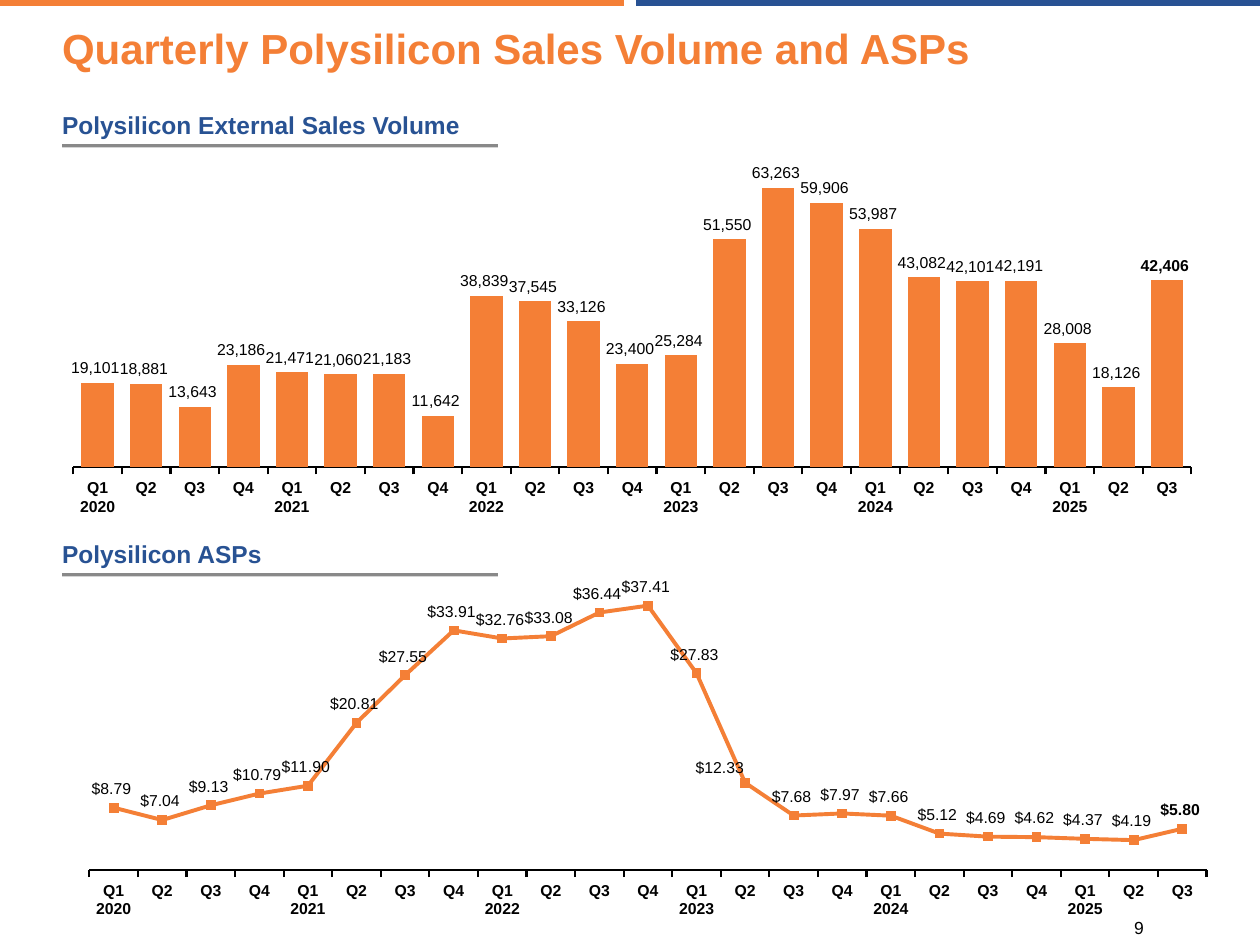
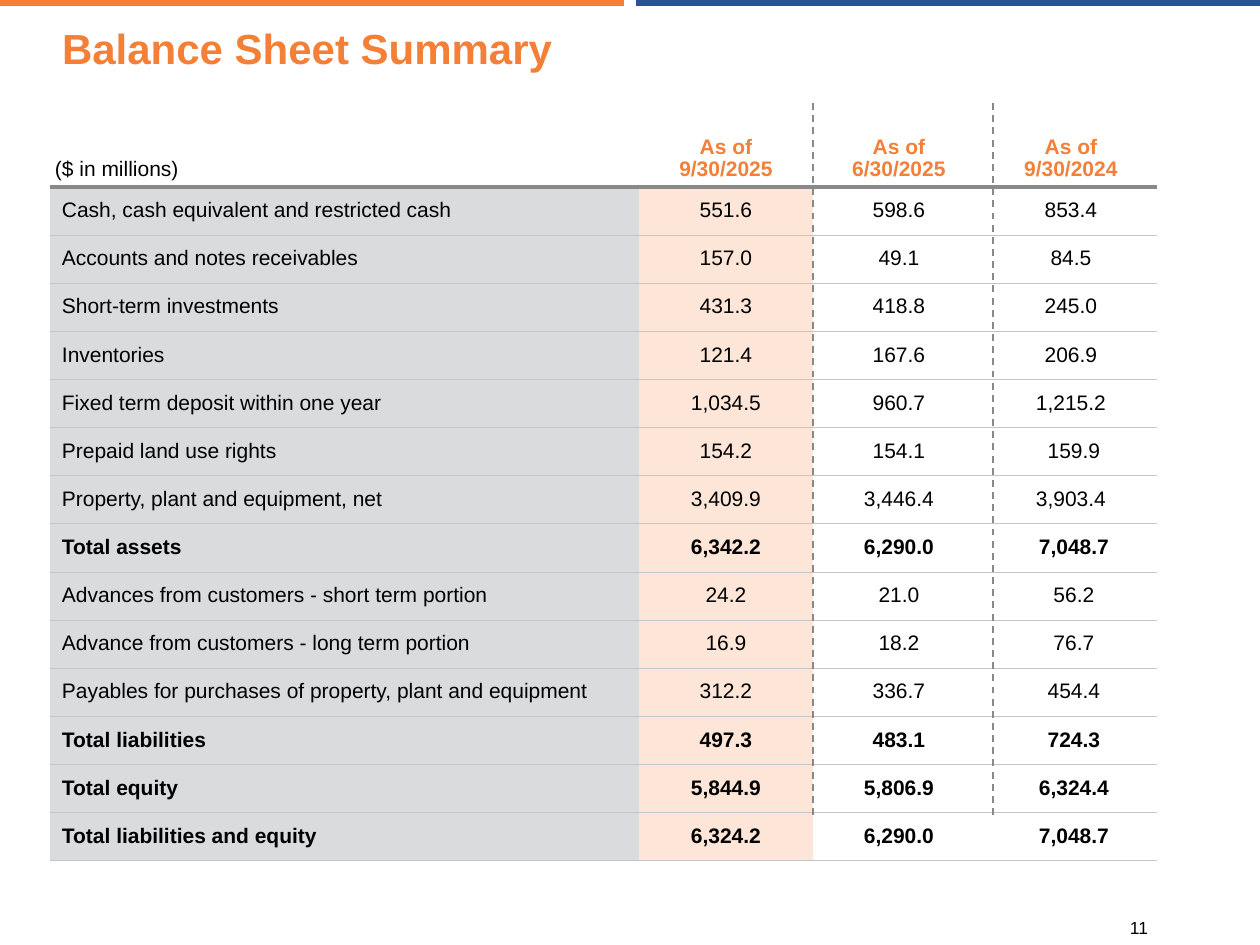
from lxml.etree import SubElement
from pptx import Presentation
from pptx.chart.data import CategoryChartData
from pptx.dml.color import RGBColor
from pptx.enum.chart import XL_CHART_TYPE, XL_LABEL_POSITION, XL_MARKER_STYLE, XL_TICK_MARK
from pptx.enum.dml import MSO_LINE
from pptx.enum.shapes import MSO_CONNECTOR, MSO_SHAPE
from pptx.enum.text import MSO_ANCHOR, PP_ALIGN
from pptx.oxml import parse_xml
from pptx.oxml.ns import nsdecls, qn
from pptx.util import Emu, Pt

FONT = "Arial"
ORANGE, BLUE, GREY, BLACK, WHITE = "F47F36", "285293", "898989", "000000", "FFFFFF"
LABEL_FILL, CURRENT_FILL, RULE = "DADBDD", "FDE5D7", "C3C5C8"
NO_TABLE_STYLE = "{2D5ABB26-0587-4C30-8999-92F81FD0307C}"

QUARTERS = [
    f"Q{quarter} {year}" if quarter == 1 else f"Q{quarter}"
    for year in range(2020, 2026)
    for quarter in range(1, 5)
][:-1]

VOLUME = {
    "heading": "Polysilicon External Sales Volume",
    "heading_top": 112,
    "kind": XL_CHART_TYPE.COLUMN_CLUSTERED,
    "box": (50, 145, 1160, 375),
    "plot": (0.02, 0.035, 0.964, 0.824),
    "format": r"#,##0_);[Red]\(#,##0\)",
    "maximum": 70000,
    "position": XL_LABEL_POSITION.OUTSIDE_END,
    "values": [19101, 18881, 13643, 23186, 21471, 21060, 21183, 11642,
               38839, 37545, 33126, 23400, 25284, 51550, 63263, 59906,
               53987, 43082, 42101, 42191, 28008, 18126, 42406],
}
PRICES = {
    "heading": "Polysilicon ASPs",
    "heading_top": 541,
    "kind": XL_CHART_TYPE.LINE_MARKERS,
    "box": (50, 578, 1159, 365),
    "plot": (0.034, 0.007, 0.964, 0.792),
    "format": r'"$"#,##0.00_);[Red]\("$"#,##0.00\)',
    "maximum": 40.8,
    "position": XL_LABEL_POSITION.ABOVE,
    "values": [8.79, 7.04, 9.13, 10.79, 11.9, 20.81, 27.55, 33.91,
               32.76, 33.08, 36.44, 37.41, 27.83, 12.33, 7.68, 7.97,
               7.66, 5.12, 4.69, 4.62, 4.37, 4.19, 5.8],
}
MOVED_LABEL, MOVED_BY = 13, (-0.02, 0.01)

HEADER = ["($ in millions)", "As of\n9/30/2025", "As of\n6/30/2025", "As of\n9/30/2024"]
BALANCE = [
    ("Cash, cash equivalent and restricted cash", "551.6", "598.6", "853.4"),
    ("Accounts and notes receivables", "157.0", "49.1", "84.5"),
    ("Short-term investments", "431.3", "418.8", "245.0"),
    ("Inventories", "121.4", "167.6", "206.9"),
    ("Fixed term deposit within one year", "1,034.5", "960.7", "1,215.2"),
    ("Prepaid land use rights", "154.2", "154.1", "159.9"),
    ("Property, plant and equipment, net", "3,409.9", "3,446.4", "3,903.4"),
    ("Total assets", "6,342.2", "6,290.0", "7,048.7"),
    ("Advances from customers - short term portion", "24.2", "21.0", "56.2"),
    ("Advance from customers - long term portion", "16.9", "18.2", "76.7"),
    ("Payables for purchases of property, plant and equipment", "312.2", "336.7", "454.4"),
    ("Total liabilities", "497.3", "483.1", "724.3"),
    ("Total equity", "5,844.9", "5,806.9", "6,324.4"),
    ("Total liabilities and equity", "6,324.2", "6,290.0", "7,048.7"),
]
COLUMN_WIDTHS = [589, 174, 172, 172]
TABLE_LEFT, TABLE_TOP, HEADER_HEIGHT, BODY_HEIGHT = 50, 101, 86, 674
SHIFTED_ROWS = {5, *range(7, 14)}


def px(length):
    return Emu(round(length * 914400 / 126))


def rgb(colour):
    return RGBColor.from_string(colour)


def set_font(font, size, colour=BLACK, bold=False):
    font.name, font.size, font.bold = FONT, Pt(size), bold
    font.color.rgb = rgb(colour)


def write(frame, text, size, colour=BLACK, bold=False, align=PP_ALIGN.LEFT, spacing=0.95):
    for index, line in enumerate(text.split("\n")):
        para = frame.add_paragraph() if index else frame.paragraphs[0]
        para.text, para.alignment, para.line_spacing = line, align, spacing
        set_font(para.font, size, colour, bold)


def set_margins(target, left, top, right, bottom):
    target.margin_left, target.margin_top = px(left), px(top)
    target.margin_right, target.margin_bottom = px(right), px(bottom)


def add_line(page, start, end, colour, width, dash=None):
    line = page.shapes.add_connector(MSO_CONNECTOR.STRAIGHT, *map(px, start + end))
    line.line.color.rgb, line.line.width = rgb(colour), Pt(width)
    if dash:
        line.line.dash_style = dash
    SubElement(line._element.spPr, qn("a:effectLst"))


def add_page(deck, title, number):
    page = deck.slides.add_slide(deck.slide_layouts[5])
    add_line(page, (0, 3), (624, 3), ORANGE, 3)
    add_line(page, (636, 3), (1260, 3), BLUE, 3)
    box = page.shapes.title
    box.left, box.top, box.width, box.height = map(px, (62, 26, 1136, 48))
    set_margins(box.text_frame, 0, 0, 0, 0)
    box.text_frame.vertical_anchor = MSO_ANCHOR.MIDDLE
    write(box.text_frame, title, 24, ORANGE, True)
    box = page.shapes.add_textbox(*map(px, (1018, 895, 242, 49)))
    frame = box.text_frame
    frame.word_wrap, frame.vertical_anchor = True, MSO_ANCHOR.BOTTOM
    set_margins(frame, 0, 6, 0, 6)
    write(frame, str(number), 10, align=PP_ALIGN.CENTER, spacing=1.0)
    return page


def add_heading(page, text, top):
    box = page.shapes.add_shape(MSO_SHAPE.RECTANGLE, *map(px, (62, top, 436, 32)))
    box.fill.solid()
    box.fill.fore_color.rgb = rgb(WHITE)
    box.line.fill.background()
    box.shadow.inherit = False
    effects = box._element.spPr.find(qn("a:effectLst"))
    effects.append(parse_xml(
        f'<a:outerShdw {nsdecls("a")} blurRad="0" dist="25400" dir="5400000" algn="t" '
        f'rotWithShape="0"><a:srgbClr val="{GREY}"/></a:outerShdw>'))
    box.text_frame.vertical_anchor = MSO_ANCHOR.BOTTOM
    set_margins(box.text_frame, 0, 0, 0, 4)
    write(box.text_frame, text, 14, BLUE, True)


def manual_layout(inner, **places):
    target = '<c:layoutTarget val="inner"/><c:xMode val="edge"/><c:yMode val="edge"/>' if inner else ""
    parts = "".join(f'<c:{name} val="{value}"/>' for name, value in places.items())
    return parse_xml(f'<c:layout {nsdecls("c")}><c:manualLayout>{target}{parts}</c:manualLayout></c:layout>')


def format_axes(chart, maximum):
    axis = chart.category_axis
    axis.has_major_gridlines = False
    axis.major_tick_mark, axis.minor_tick_mark = XL_TICK_MARK.OUTSIDE, XL_TICK_MARK.NONE
    axis.format.line.color.rgb, axis.format.line.width = rgb(BLACK), Pt(1.25)
    set_font(axis.tick_labels.font, 9, bold=True)
    axis = chart.value_axis
    axis.has_major_gridlines, axis.visible = False, False
    axis.minimum_scale, axis.maximum_scale = 0, maximum
    if axis._element.find(qn("c:crossBetween")) is None:
        axis._element.find(qn("c:crosses")).addnext(
            parse_xml(f'<c:crossBetween {nsdecls("c")} val="between"/>'))


def add_quarterly_chart(page, content):
    add_heading(page, content["heading"], content["heading_top"])
    data = CategoryChartData(number_format=content["format"])
    data.categories = QUARTERS
    data.add_series("Series 1", content["values"])
    chart = page.shapes.add_chart(content["kind"], *map(px, content["box"]), data).chart
    chart.has_title = chart.has_legend = False
    set_font(chart.font, 9)
    format_axes(chart, content["maximum"])
    plot_area = chart._chartSpace.chart.plotArea
    for old in plot_area.findall(qn("c:layout")):
        plot_area.remove(old)
    plot_area.insert(0, manual_layout(True, **dict(zip("xywh", content["plot"]))))
    plot = chart.plots[0]
    plot.vary_by_categories = False
    series = plot.series[0]
    labels = series.data_labels
    labels.show_value, labels.position = True, content["position"]
    labels.number_format, labels.number_format_is_linked = content["format"], False
    set_font(labels.font, 9)
    label = series.points[len(QUARTERS) - 1].data_label
    set_font(label.font, 9, bold=True)
    label.position = content["position"]
    return plot, series


def add_volume_chart(page):
    plot, series = add_quarterly_chart(page, VOLUME)
    plot.gap_width = 50
    series.format.fill.solid()
    series.format.fill.fore_color.rgb = rgb(ORANGE)


def add_price_chart(page):
    _, series = add_quarterly_chart(page, PRICES)
    series.smooth = False
    series.format.line.color.rgb, series.format.line.width = rgb(ORANGE), Pt(2.25)
    marker = series.marker
    marker.style, marker.size = XL_MARKER_STYLE.SQUARE, 5
    marker.format.fill.solid()
    marker.format.fill.fore_color.rgb = rgb(ORANGE)
    marker.format.line.color.rgb = rgb(ORANGE)
    label = series.points[MOVED_LABEL].data_label
    set_font(label.font, 9)
    label.position = PRICES["position"]
    element = series._element.find(f'.//{qn("c:dLbl")}')
    element.find(qn("c:idx")).addnext(manual_layout(False, **dict(zip("xy", MOVED_BY))))


def add_border(cell, side, colour, width):
    border = parse_xml(
        f'<a:{side} {nsdecls("a")} w="{Pt(width)}"><a:solidFill><a:srgbClr val="{colour}"/>'
        f'</a:solidFill></a:{side}>')
    properties = cell._tc.get_or_add_tcPr()
    properties.insert(len(properties.findall(qn("a:lnT"))), border)


def fill_header(cell, text, column):
    cell.vertical_anchor = MSO_ANCHOR.BOTTOM
    set_margins(cell, 5, 6, 5, 6)
    if column:
        write(cell.text_frame, text, 12, ORANGE, True, PP_ALIGN.CENTER)
    else:
        write(cell.text_frame, text, 12, spacing=1.0)
    cell.fill.background()
    add_border(cell, "lnB", GREY, 2.25)


def fill_body(cell, text, row, column, bold):
    cell.vertical_anchor = MSO_ANCHOR.MIDDLE
    if column == 0:
        set_margins(cell, 12, 6, 12, 6)
    else:
        set_margins(cell, 6 if column == 3 and row in SHIFTED_ROWS else 0, 0, 0, 0)
    align = PP_ALIGN.CENTER if column else PP_ALIGN.LEFT
    write(cell.text_frame, text, 12, bold=bold, align=align)
    if column < 2:
        cell.fill.solid()
        cell.fill.fore_color.rgb = rgb((LABEL_FILL, CURRENT_FILL)[column])
    else:
        cell.fill.background()
    add_border(cell, "lnT", *((RULE, 0.5) if row else (GREY, 2.25)))
    add_border(cell, "lnB", RULE, 0.5)


def add_balance_table(page):
    box = (TABLE_LEFT, TABLE_TOP, sum(COLUMN_WIDTHS), HEADER_HEIGHT + BODY_HEIGHT)
    table = page.shapes.add_table(len(BALANCE) + 1, len(HEADER), *map(px, box)).table
    table.first_row = table.horz_banding = False
    table._tbl.tblPr.find(qn("a:tableStyleId")).text = NO_TABLE_STYLE
    for column, width in zip(table.columns, COLUMN_WIDTHS):
        column.width = px(width)
    for index, row in enumerate(table.rows):
        row.height = px(BODY_HEIGHT / len(BALANCE) if index else HEADER_HEIGHT)
    for column, text in enumerate(HEADER):
        fill_header(table.cell(0, column), text, column)
    for row, texts in enumerate(BALANCE):
        for column, text in enumerate(texts):
            fill_body(table.cell(row + 1, column), text, row, column, texts[0].startswith("Total"))
    for x in (813, 993):
        add_line(page, (x, 815), (x, TABLE_TOP), GREY, 1, MSO_LINE.DASH)


def main():
    deck = Presentation()
    deck.slide_width, deck.slide_height = px(1260), px(945)
    page = add_page(deck, "Quarterly Polysilicon Sales Volume and ASPs", 9)
    add_volume_chart(page)
    add_price_chart(page)
    add_balance_table(add_page(deck, "Balance Sheet Summary", 11))
    deck.save("out.pptx")


if __name__ == "__main__":
    main()
